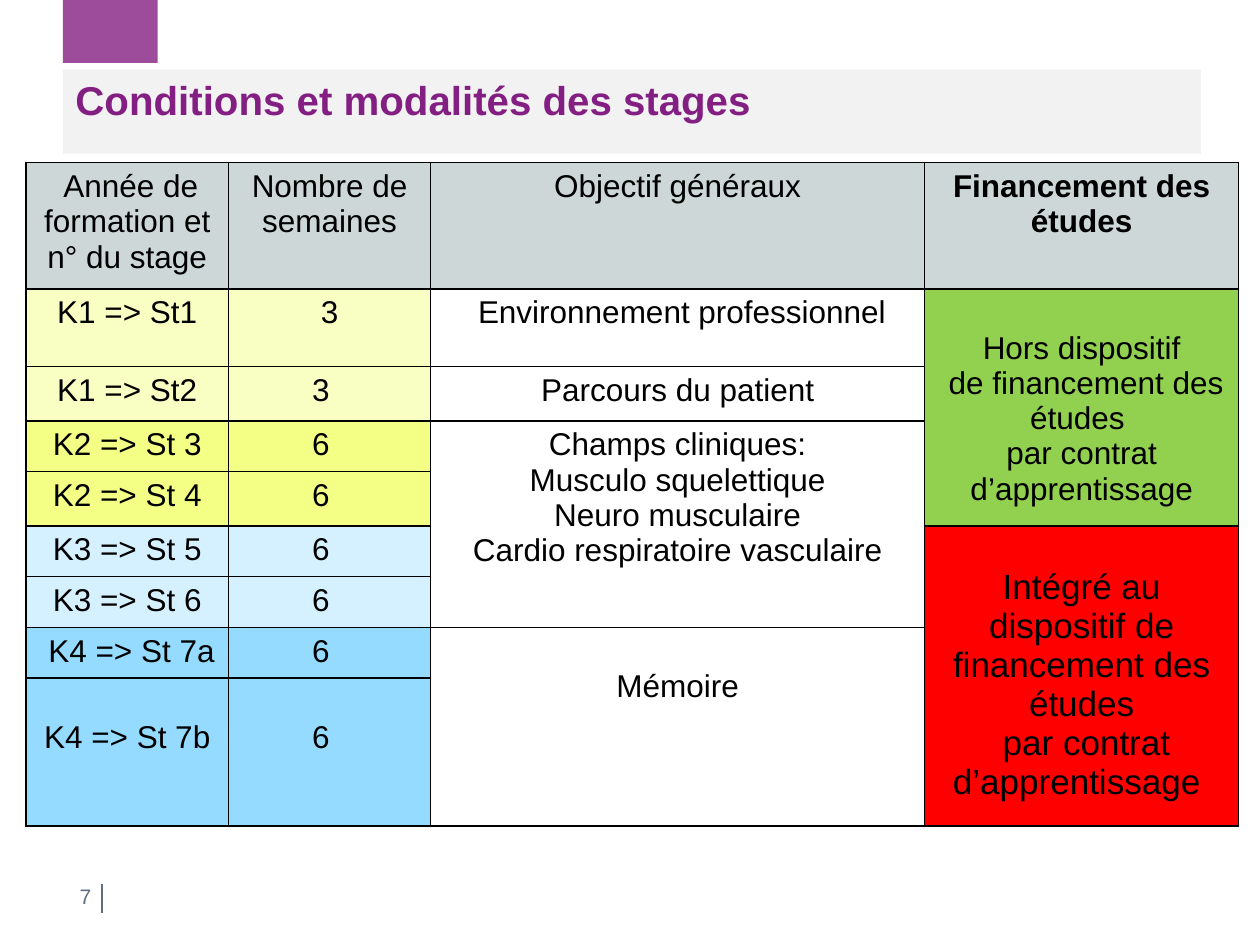
"""Build the slide on internship conditions and funding."""
from lxml import etree
from pptx import Presentation
from pptx.dml.color import RGBColor
from pptx.enum.shapes import MSO_CONNECTOR, MSO_SHAPE
from pptx.enum.text import PP_ALIGN
from pptx.oxml.ns import qn
from pptx.util import Cm, Pt

RECT = MSO_SHAPE.RECTANGLE
LINE = MSO_CONNECTOR.STRAIGHT
LEFT, MID, RIGHT = PP_ALIGN.LEFT, PP_ALIGN.CENTER, PP_ALIGN.RIGHT

PURPLE, SLATE, BLACK, WHITE = "831F82", "616E7F", "000000", "FFFFFF"
TITLE = "Conditions et modalités des stages"
HEADS = [" Année de formation et n° du stage", "Nombre de semaines",
         "Objectif généraux", "Financement des études"]
STAGES = [
    ("K1 => St1", "3", "F9FFC2"),
    ("K1 => St2", "3", "F9FFC2"),
    ("K2 => St 3", "6", "F4FF85"),
    ("K2 => St 4", "6", "F4FF85"),
    ("K3 => St 5", "6", "D5F1FF"),
    ("K3 => St 6", "6", "D5F1FF"),
    (" K4 => St 7a", "6", "95DBFF"),
    ("K4 => St 7b", "6", "95DBFF"),
]
GOALS = [
    (1, 1, " Environnement professionnel", {}),
    (2, 2, "Parcours du patient", {}),
    (3, 6, "Champs cliniques:\nMusculo squelettique\nNeuro musculaire\n"
           "Cardio respiratoire vasculaire", {}),
    (7, 8, "Mémoire", {"drop": True}),
]
FUNDS = [
    (1, 4, "Hors dispositif\n de financement des études \n"
           "par contrat d’apprentissage", {"fill": "92D050", "drop": True}),
    (5, 8, "Intégré au dispositif de financement des études\n"
           " par contrat d’apprentissage ",
     {"fill": "FF0000", "drop": True, "size": 20}),
]
COLS = [4.09, 4.07, 9.96, 6.33]
ROWS = [2.46, 1.57, 1.09, 0.99, 1.09, 0.99, 0.99, 0.99, 2.92]
PAD, DROP, SHIFT = 0.13, 0.84, 0.61


def color(code):
    return RGBColor.from_string(code)


def write(frame, text, size=18, ink=BLACK, bold=False, align=MID, lead=None):
    frame.word_wrap = True
    for i, line in enumerate(text.split("\n")):
        para = frame.add_paragraph() if i else frame.paragraphs[0]
        para.alignment = align
        if lead:
            para.line_spacing = Pt(lead)
        run = para.add_run()
        run.text = line
        font = run.font
        font.name, font.size, font.bold = "Arial", Pt(size), bold
        font.color.rgb = color(ink)


def block(slide, x, y, w, h, fill):
    box = slide.shapes.add_shape(RECT, Cm(x), Cm(y), Cm(w), Cm(h))
    box.shadow.inherit = False
    box.fill.solid()
    box.fill.fore_color.rgb = color(fill)
    box.line.fill.background()
    return box


def edge(cell):
    props = cell._tc.get_or_add_tcPr()
    for i, side in enumerate(("lnL", "lnR", "lnT", "lnB")):
        line = etree.Element(qn("a:" + side), w=str(Pt(1)))
        solid = etree.SubElement(line, qn("a:solidFill"))
        etree.SubElement(solid, qn("a:srgbClr"), val=BLACK)
        props.insert(i, line)


def put(cell, text, fill=WHITE, drop=False, shift=False, **form):
    cell.fill.solid()
    cell.fill.fore_color.rgb = color(fill)
    if drop:
        cell.margin_top = Cm(DROP)
    if shift:
        cell.margin_right = Cm(SHIFT)
    write(cell.text_frame, text, **form)


def grid(slide):
    frame = slide.shapes.add_table(len(ROWS), len(COLS), Cm(0.52), Cm(3.28),
                                   Cm(sum(COLS)), Cm(sum(ROWS)))
    table = frame.table
    for col, wide in zip(table.columns, COLS):
        col.width = Cm(wide)
    for row, tall in zip(table.rows, ROWS):
        row.height = Cm(tall)
    for cell in table.iter_cells():
        cell.margin_top = cell.margin_bottom = Cm(PAD)
        edge(cell)
    for c, head in enumerate(HEADS):
        put(table.cell(0, c), head, fill="CDD7D7", bold=c == 3)
    for r, (stage, weeks, fill) in enumerate(STAGES, 1):
        last = r == len(STAGES)
        put(table.cell(r, 0), stage, fill=fill, drop=last)
        put(table.cell(r, 1), weeks, fill=fill, drop=last, shift=r > 1)
    for c, spans in ((2, GOALS), (3, FUNDS)):
        for top, end, text, form in spans:
            cell = table.cell(top, c)
            if end > top:
                cell.merge(table.cell(end, c))
            put(cell, text, **form)


def main():
    deck = Presentation()
    deck.slide_width, deck.slide_height = Cm(25.4), Cm(19.08)
    slide = deck.slides.add_slide(deck.slide_layouts[6])

    rule = slide.shapes.add_connector(LINE, Cm(2.06), Cm(17.83),
                                      Cm(2.06), Cm(18.42))
    rule.line.color.rgb = color(SLATE)
    rule.line.width = Pt(1)
    etree.SubElement(rule._element.spPr, qn("a:effectLst"))

    block(slide, 1.27, 0, 1.91, 1.27, "9C4C9B")
    title = block(slide, 1.27, 1.4, 22.94, 1.7, "F2F2F2").text_frame
    title.vertical_anchor = None
    write(title, TITLE, size=23, ink=PURPLE, bold=True, align=LEFT)

    page = slide.shapes.add_textbox(Cm(0.84), Cm(17.86), Cm(1), Cm(0.48))
    note = page.text_frame
    note.margin_left = note.margin_right = 0
    note.margin_top = note.margin_bottom = 0
    write(note, "7", size=12, ink=SLATE, align=RIGHT, lead=13.1)

    grid(slide)
    deck.save("out.pptx")


if __name__ == "__main__":
    main()
